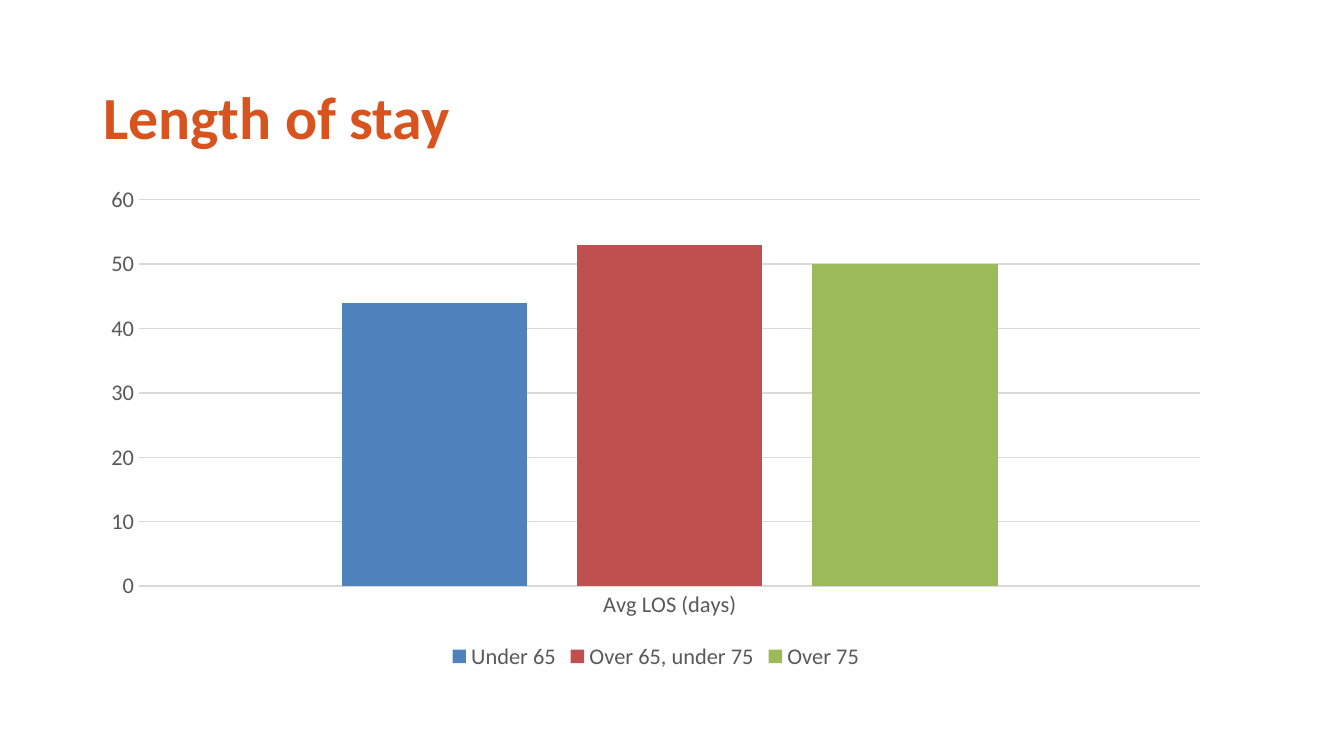
from pptx import Presentation
from pptx.chart.data import CategoryChartData
from pptx.dml.color import RGBColor
from pptx.enum.chart import XL_CHART_TYPE, XL_LEGEND_POSITION, XL_TICK_MARK
from pptx.enum.text import MSO_ANCHOR, PP_ALIGN
from pptx.util import Inches, Pt

WIDE = Inches(10)
HIGH = WIDE * 9 // 16
FACE = "Calibri"
INK, RULE, TITLE = "595959", "D9D9D9", "D9531E"
STAYS = [
    ("Under 65", 44, "4F81BD"),
    ("Over 65, under 75", 53, "C0504D"),
    ("Over 75", 50, "9BBB59"),
]


def area(left, top, width, height):
    """Turn percentages of the slide into a box."""
    return [int(share * side / 100) for share, side in
            zip((left, top, width, height), (WIDE, HIGH) * 2)]


def tint(code):
    return RGBColor.from_string(code)


def style(font, size, code, bold=False):
    font.name, font.size, font.bold = FACE, Pt(size), bold
    font.color.rgb = tint(code)


def rule(line):
    line.color.rgb = tint(RULE)
    line.width = Pt(0.75)


def add_title(slide, box, text):
    title = slide.shapes.title
    title.left, title.top, title.width, title.height = box
    frame = title.text_frame
    frame.word_wrap = True
    frame.vertical_anchor = MSO_ANCHOR.MIDDLE
    para = frame.paragraphs[0]
    para.alignment = PP_ALIGN.LEFT
    run = para.add_run()
    run.text = text
    style(run.font, 32, TITLE, bold=True)


def add_stays(slide, box):
    """Add the column chart, with one series for each age group."""
    data = CategoryChartData()
    data.categories = ["Avg LOS (days)"]
    for name, days, _ in STAYS:
        data.add_series(name, [days])
    chart = slide.shapes.add_chart(
        XL_CHART_TYPE.COLUMN_CLUSTERED, *box, data).chart
    chart.has_title = False
    style(chart.font, 10, "000000")

    plot = chart.plots[0]
    plot.gap_width, plot.overlap = 219, -27
    plot.vary_by_categories = False
    for bar, (_, _, code) in zip(plot.series, STAYS):
        bar.format.fill.solid()
        bar.format.fill.fore_color.rgb = tint(code)

    for axis in (chart.category_axis, chart.value_axis):
        axis.major_tick_mark = axis.minor_tick_mark = XL_TICK_MARK.NONE
        style(axis.tick_labels.font, 12, INK)
    rule(chart.category_axis.format.line)

    scale = chart.value_axis
    scale.minimum_scale, scale.maximum_scale, scale.major_unit = 0, 60, 10
    scale.format.line.fill.background()
    scale.has_major_gridlines = True
    rule(scale.major_gridlines.format.line)

    chart.has_legend = True
    chart.legend.position = XL_LEGEND_POSITION.BOTTOM
    chart.legend.include_in_layout = False
    style(chart.legend.font, 12, INK)


def main():
    deck = Presentation()
    deck.slide_width, deck.slide_height = WIDE, HIGH
    slide = deck.slides.add_slide(deck.slide_layouts[5])
    add_title(slide, area(6.7, 8.4, 74, 13.7), "Length of stay")
    add_stays(slide, area(6.6, 23.35, 84.4, 65.95))
    deck.save("out.pptx")


if __name__ == "__main__":
    main()
